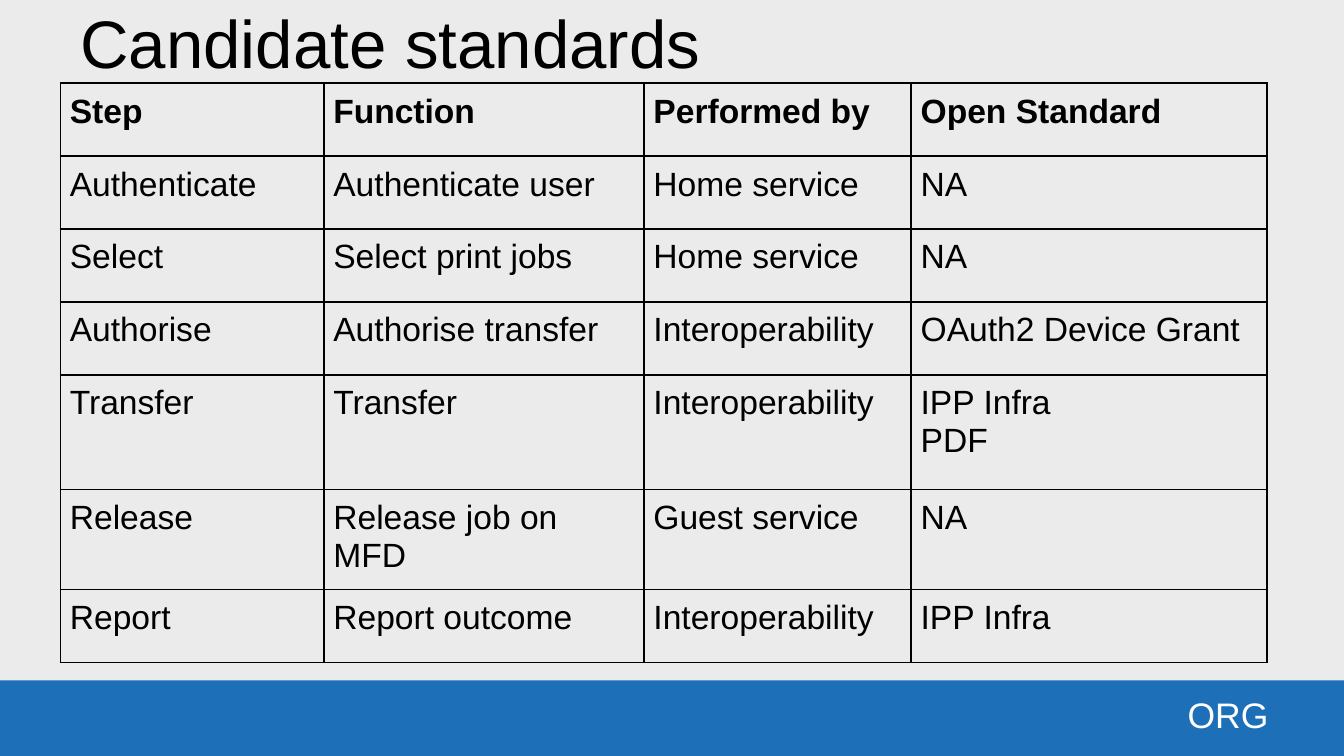
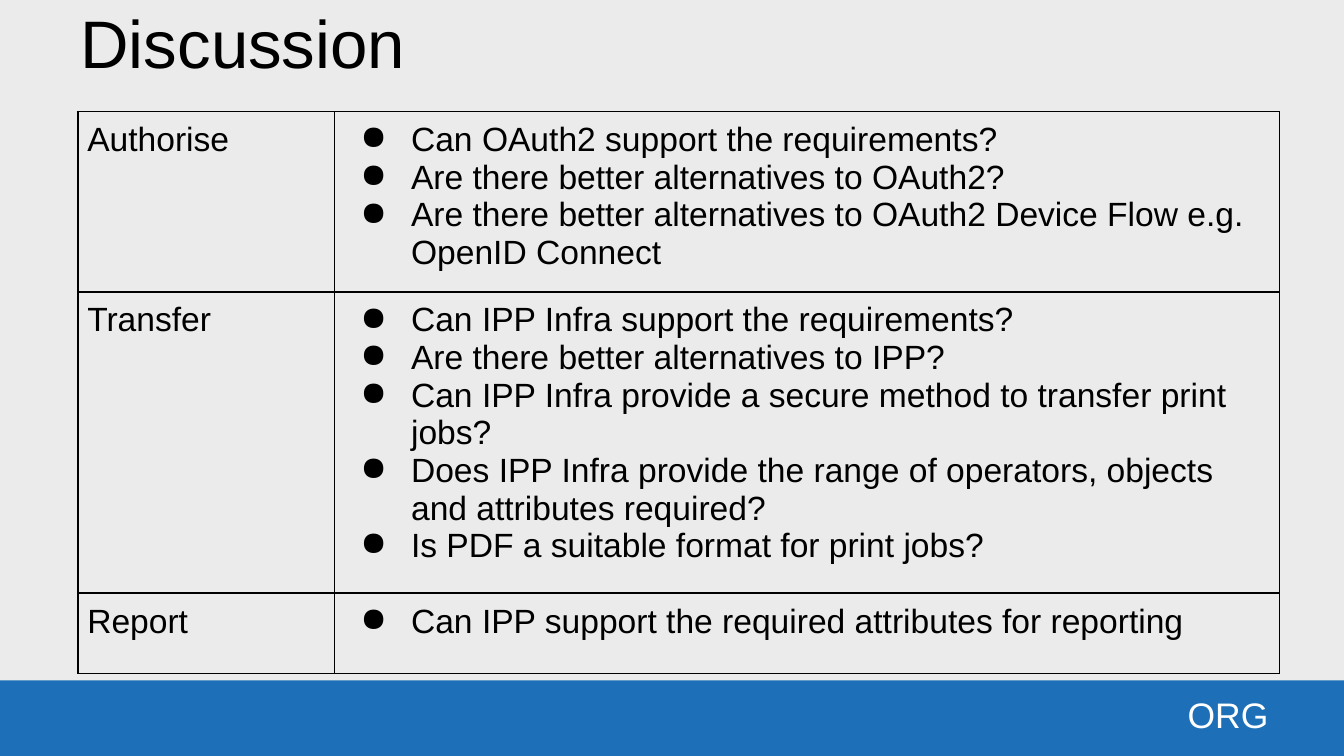
from lxml.etree import SubElement
from pptx import Presentation
from pptx.dml.color import RGBColor
from pptx.enum.shapes import MSO_SHAPE as Preset
from pptx.enum.text import MSO_ANCHOR as Anchor, PP_ALIGN as Align
from pptx.oxml.ns import qn
from pptx.util import Cm, Pt

PAPER, BAND, INK, WHITE = "EBEBEB", "1D70B8", "000000", "FFFFFF"
FONT = "Arial"
PAGE_WIDTH, PAGE_HEIGHT = 25.4, 14.29
FOOTER_BOX = (0, 12.86, PAGE_WIDTH, 1.43)
TITLE_BOX = (1.47, 0, 22.48, 1.57)

STANDARDS_BOX = (1.14, 1.57, 22.81, 10.45)
STANDARDS_COLUMNS = [4.98, 6.05, 5.05, 6.73]
STANDARDS_ROWS = [1.38] * 4 + [2.17] + [1.38] * 2
STANDARDS = [
    ["Step", "Function", "Performed by", "Open Standard"],
    ["Authenticate", "Authenticate user", "Home service", "NA"],
    ["Select", "Select print jobs", "Home service", "NA"],
    ["Authorise", "Authorise transfer", "Interoperability", "OAuth2 Device Grant"],
    ["Transfer", "Transfer", "Interoperability", "IPP Infra\nPDF"],
    ["Release", "Release job on MFD", "Guest service", "NA"],
    ["Report", "Report outcome", "Interoperability", "IPP Infra"],
]

DISCUSSION_BOX = (1.47, 2.11, 22.71, 9.85)
DISCUSSION_COLUMNS = [4.85, 17.86]
DISCUSSION_ROWS = [3.28, 5.05, 1.52]
DISCUSSION = [
    ["Authorise", "Can OAuth2 support the requirements?\n"
                  "Are there better alternatives to OAuth2?\n"
                  "Are there better alternatives to OAuth2 Device Flow e.g. OpenID Connect"],
    ["Transfer", "Can IPP Infra support the requirements?\n"
                 "Are there better alternatives to IPP?\n"
                 "Can IPP Infra provide a secure method to transfer print jobs?\n"
                 "Does IPP Infra provide the range of operators, objects and attributes required?\n"
                 "Is PDF a suitable format for print jobs?"],
    ["Report", "Can IPP support the required attributes for reporting"],
]


def color(code):
    return RGBColor.from_string(code)


def place(box):
    return [Cm(length) for length in box]


def add_bullet(para):
    props = para._p.get_or_add_pPr()
    props.set("marL", str(Cm(1.27)))
    props.set("indent", str(-Cm(0.96)))
    tint = SubElement(props, qn("a:buClr"))
    SubElement(tint, qn("a:srgbClr"), val=INK)
    SubElement(props, qn("a:buChar"), char="●")


def write(frame, text, size=18, ink=INK, bold=False, align=Align.LEFT, bullets=False):
    for index, line in enumerate(text.split("\n")):
        para = frame.add_paragraph() if index else frame.paragraphs[0]
        para.alignment = align
        if bullets:
            add_bullet(para)
        span = para.add_run()
        span.text = line
        span.font.name = FONT
        span.font.size = Pt(size)
        span.font.bold = bold
        span.font.color.rgb = color(ink)


def set_margins(holder, margin):
    holder.margin_left = holder.margin_right = Cm(margin)
    holder.margin_top = holder.margin_bottom = Cm(margin)


def add_label(page, box, text, margin=0, **style):
    frame = page.shapes.add_textbox(*place(box)).text_frame
    frame.word_wrap = True
    frame.vertical_anchor = Anchor.MIDDLE
    set_margins(frame, margin)
    write(frame, text, **style)


def add_footer(page, box):
    left, top, width, height = box
    band = page.shapes.add_shape(Preset.RECTANGLE, *place(box))
    band.shadow.inherit = False
    band.fill.solid()
    band.fill.fore_color.rgb = color(BAND)
    band.line.fill.background()
    label_box = (left + width - 9, top + 0.25, 7.57, 0.79)
    add_label(page, label_box, "ORG", size=19, ink=WHITE, align=Align.RIGHT)


def add_borders(cell):
    props = cell._tc.get_or_add_tcPr()
    for side in ("lnL", "lnR", "lnT", "lnB"):
        border = SubElement(props, qn(f"a:{side}"), w=str(Pt(1)))
        fill = SubElement(border, qn("a:solidFill"))
        SubElement(fill, qn("a:srgbClr"), val=INK)


def add_grid(page, box, columns, rows, content, header=False, bullet_column=None):
    table = page.shapes.add_table(len(rows), len(columns), *place(box)).table
    table.first_row = header
    table.horz_banding = False
    for column, width in zip(table.columns, columns):
        column.width = Cm(width)
    for row, height in zip(table.rows, rows):
        row.height = Cm(height)
    for row_index, texts in enumerate(content):
        for column_index, text in enumerate(texts):
            cell = table.cell(row_index, column_index)
            set_margins(cell, 0.18)
            add_borders(cell)
            cell.fill.background()
            write(cell.text_frame, text, bold=header and row_index == 0,
                  bullets=column_index == bullet_column)


def add_page(deck, title):
    page = deck.slides.add_slide(deck.slide_layouts[6])
    page.background.fill.solid()
    page.background.fill.fore_color.rgb = color(PAPER)
    add_footer(page, FOOTER_BOX)
    add_label(page, TITLE_BOX, title, margin=0.05, size=36)
    return page


def main():
    deck = Presentation()
    deck.slide_width, deck.slide_height = Cm(PAGE_WIDTH), Cm(PAGE_HEIGHT)
    add_grid(add_page(deck, "Candidate standards"), STANDARDS_BOX,
             STANDARDS_COLUMNS, STANDARDS_ROWS, STANDARDS, header=True)
    add_grid(add_page(deck, "Discussion"), DISCUSSION_BOX,
             DISCUSSION_COLUMNS, DISCUSSION_ROWS, DISCUSSION, bullet_column=1)
    deck.save("out.pptx")


if __name__ == "__main__":
    main()
